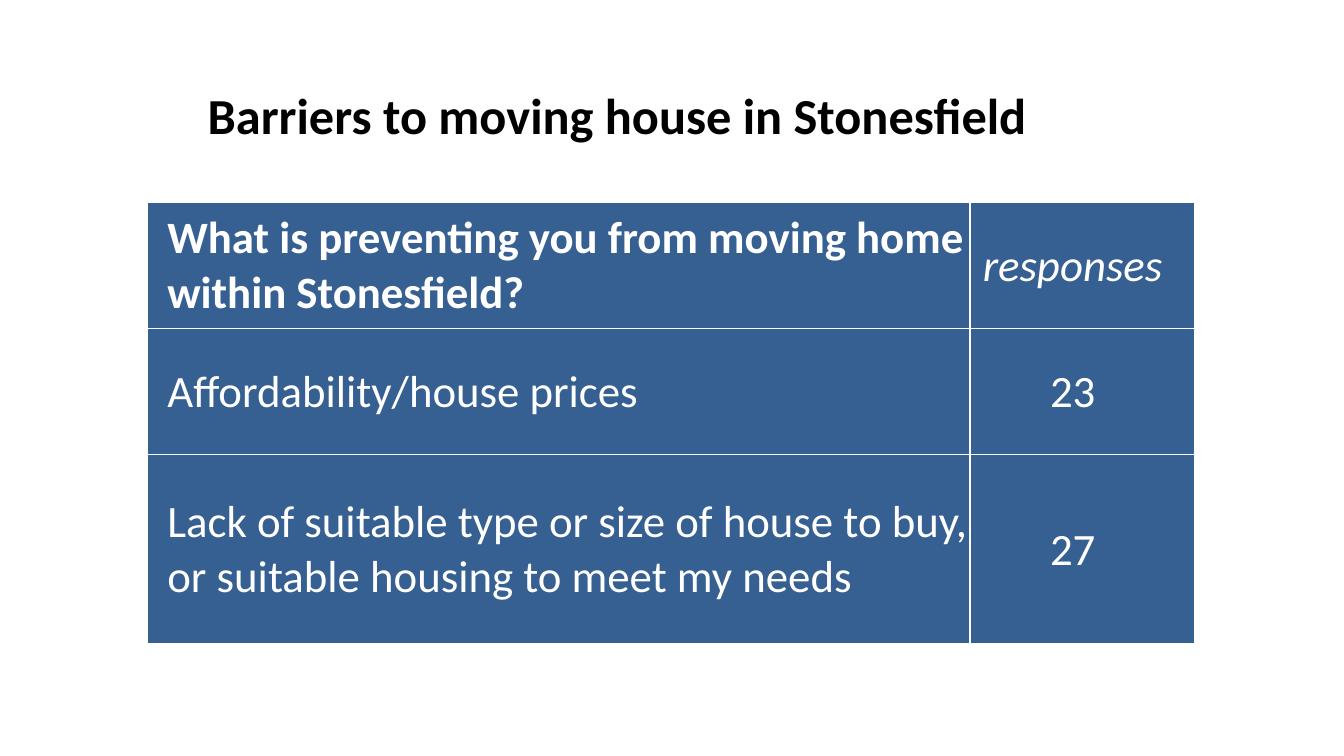
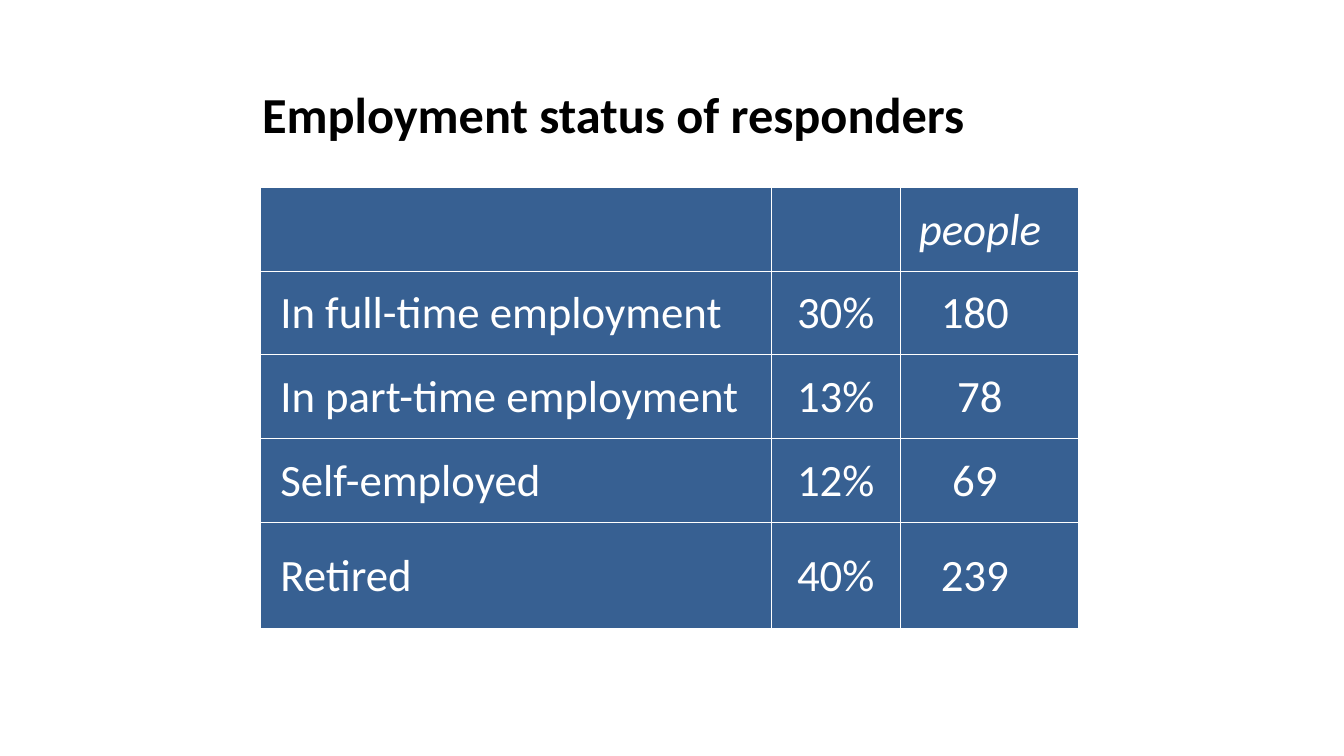
"""Build two survey slides, each with a title and a table of answers."""
from dataclasses import dataclass

from pptx import Presentation
from pptx import util as u
from pptx.dml.color import RGBColor
from pptx.enum import text
from pptx.oxml import parse_xml
from pptx.oxml.ns import nsdecls
from pptx.slide import Slide
from pptx.table import _Cell as Cell


@dataclass(frozen=True)
class Theme:
    font: str = "Calibri"
    title_size: int = 36
    table_size: int = 32
    title_color: str = "000000"
    table_color: str = "FFFFFF"
    fill_color: str = "376092"
    border_color: str = "FFFFFF"
    border_width: int = 1
    wide_margin: float = 0.2
    thin_margin: float = 0.01


@dataclass(frozen=True)
class Box:
    left: float
    top: float
    width: float
    height: float


@dataclass(frozen=True)
class SurveySlide:
    title: str
    title_box: Box
    table_left: float
    table_top: float
    column_widths: tuple[float, ...]
    row_heights: tuple[float, ...]
    rows: tuple[tuple[str, ...], ...]


THEME = Theme()

SURVEY_SLIDES = (
    SurveySlide(
        title="Barriers to moving house in Stonesfield",
        title_box=Box(1.96, 0.78, 10.4, 0.71),
        table_left=1.46,
        table_top=2.01,
        column_widths=(8.16, 2.23),
        row_heights=(1.25, 1.25, 1.88),
        rows=(
            ("What is preventing you from moving home within Stonesfield?", "responses"),
            ("Affordability/house prices", "23"),
            ("Lack of suitable type or size of house to buy, "
             "or suitable housing to meet my needs", "27"),
        ),
    ),
    SurveySlide(
        title="Employment status of responders",
        title_box=Box(2.5, 0.77, 7.96, 0.71),
        table_left=2.58,
        table_top=1.86,
        column_widths=(5.07, 1.28, 1.77),
        row_heights=(0.83,) * 4 + (1.06,),
        rows=(
            ("", "", "people"),
            ("In full-time employment", "30%", "180 "),
            ("In part-time employment", "13%", "78"),
            ("Self-employed", "12%", "69 "),
            ("Retired", "40%", "239 "),
        ),
    ),
)


def add_title(slide: Slide, wording: str, box: Box) -> None:
    title = slide.shapes.title
    title.left, title.top = u.Inches(box.left), u.Inches(box.top)
    title.width, title.height = u.Inches(box.width), u.Inches(box.height)
    frame = title.text_frame
    frame.text = wording
    frame.word_wrap = True
    frame.auto_size = text.MSO_AUTO_SIZE.SHAPE_TO_FIT_TEXT
    frame.vertical_anchor = text.MSO_ANCHOR.TOP
    paragraph = frame.paragraphs[0]
    paragraph.alignment = text.PP_ALIGN.LEFT
    paragraph.font.name = THEME.font
    paragraph.font.size = u.Pt(THEME.title_size)
    paragraph.font.bold = True
    paragraph.font.color.rgb = RGBColor.from_string(THEME.title_color)


def add_borders(cell: Cell) -> None:
    properties = cell._tc.get_or_add_tcPr()
    for side in ("lnL", "lnR", "lnT", "lnB"):
        properties.append(parse_xml(
            f'<a:{side} {nsdecls("a")} w="{u.Pt(THEME.border_width)}"><a:solidFill>'
            f'<a:srgbClr val="{THEME.border_color}"/></a:solidFill></a:{side}>'))


def format_cell(cell: Cell, wording: str, is_header: bool, is_first: bool, is_last: bool) -> None:
    add_borders(cell)
    cell.fill.solid()
    cell.fill.fore_color.rgb = RGBColor.from_string(THEME.fill_color)
    cell.vertical_anchor = text.MSO_ANCHOR.MIDDLE
    cell.margin_left = u.Inches(THEME.wide_margin if is_first else THEME.thin_margin)
    cell.margin_right = u.Inches(THEME.wide_margin if is_last else THEME.thin_margin)
    cell.margin_top, cell.margin_bottom = u.Inches(THEME.thin_margin), 0
    cell.text = wording
    paragraph = cell.text_frame.paragraphs[0]
    paragraph.alignment = text.PP_ALIGN.LEFT if is_first else text.PP_ALIGN.CENTER
    paragraph.font.name = THEME.font
    paragraph.font.size = u.Pt(THEME.table_size)
    paragraph.font.bold = is_header and is_first
    paragraph.font.italic = is_header and not is_first
    paragraph.font.color.rgb = RGBColor.from_string(THEME.table_color)


def add_survey_table(slide: Slide, survey: SurveySlide) -> None:
    table = slide.shapes.add_table(
        len(survey.rows), len(survey.column_widths),
        u.Inches(survey.table_left), u.Inches(survey.table_top),
        u.Inches(sum(survey.column_widths)), u.Inches(sum(survey.row_heights))).table
    table.first_row = table.horz_banding = False
    for column, width in zip(table.columns, survey.column_widths):
        column.width = u.Inches(width)
    for row, height in zip(table.rows, survey.row_heights):
        row.height = u.Inches(height)
    last_column = len(survey.column_widths) - 1
    for row_index, wordings in enumerate(survey.rows):
        for column_index, wording in enumerate(wordings):
            format_cell(table.cell(row_index, column_index), wording,
                        is_header=row_index == 0,
                        is_first=column_index == 0,
                        is_last=column_index == last_column)


def main() -> None:
    presentation = Presentation()
    presentation.slide_width = u.Inches(13.33)
    presentation.slide_height = u.Inches(7.5)
    title_only = presentation.slide_layouts.get_by_name("Title Only")
    for survey in SURVEY_SLIDES:
        slide = presentation.slides.add_slide(title_only)
        add_title(slide, survey.title, survey.title_box)
        add_survey_table(slide, survey)
    presentation.save("out.pptx")


if __name__ == "__main__":
    main()
